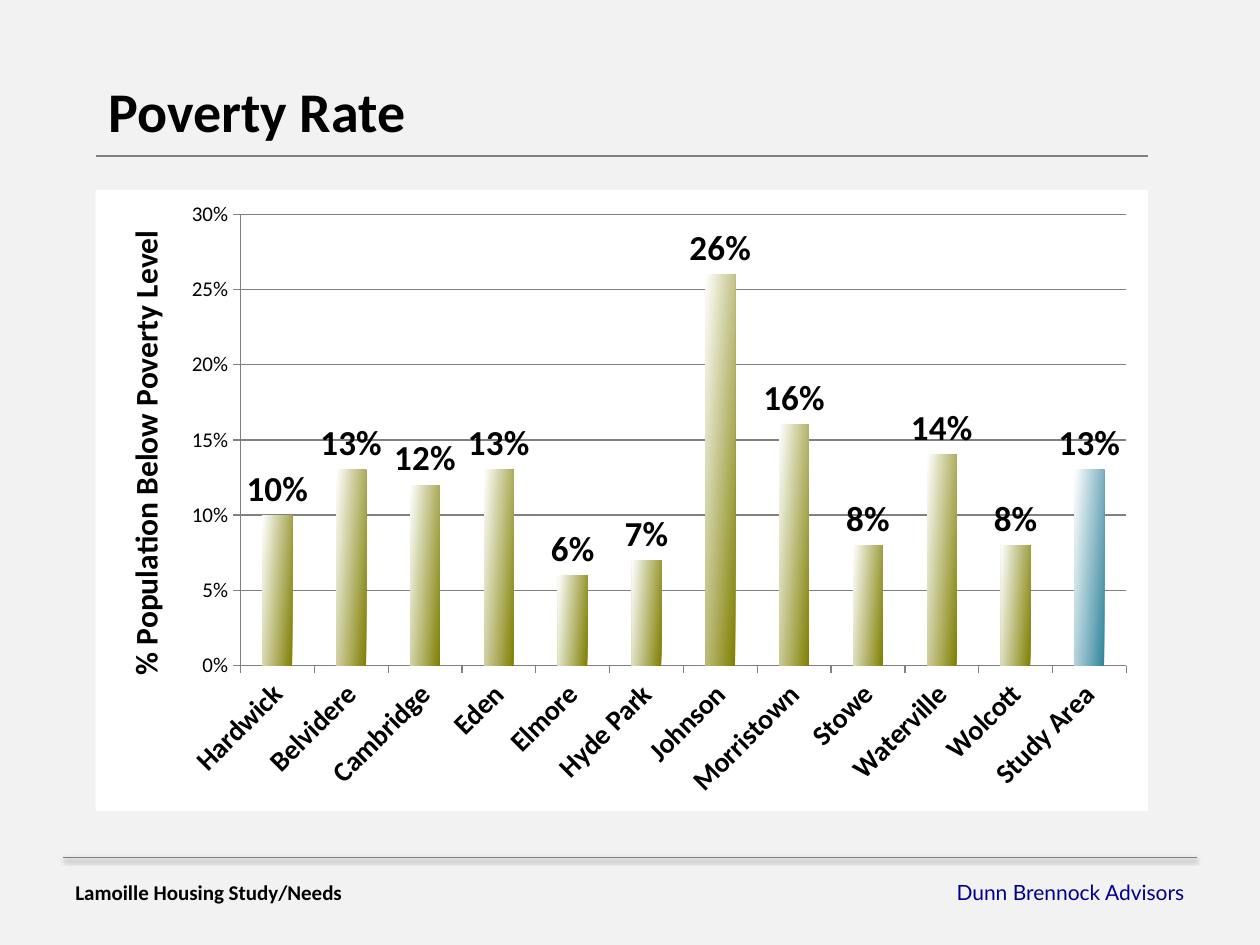
from lxml import etree
from pptx import Presentation
from pptx.chart.data import CategoryChartData
from pptx.dml.color import RGBColor
from pptx.enum.chart import XL_CHART_TYPE, XL_LABEL_POSITION, XL_TICK_MARK
from pptx.enum.shapes import MSO_CONNECTOR
from pptx.enum.text import MSO_ANCHOR, PP_ALIGN
from pptx.oxml import parse_xml
from pptx.oxml.ns import nsdecls, qn
from pptx.util import Cm, Pt

BLACK = RGBColor(0x00, 0x00, 0x00)
WHITE = RGBColor(0xFF, 0xFF, 0xFF)
PALE_GRAY = RGBColor(0xF2, 0xF2, 0xF2)
GRAY = RGBColor(0x80, 0x80, 0x80)
NAVY = RGBColor(0x00, 0x00, 0x90)
OLIVE = RGBColor(0x80, 0x80, 0x03)
TEAL = RGBColor(0x31, 0x85, 0x9C)

POVERTY_RATES = {
    "Hardwick": 0.10, "Belvidere": 0.13, "Cambridge": 0.12, "Eden": 0.13,
    "Elmore": 0.06, "Hyde Park": 0.07, "Johnson": 0.26, "Morristown": 0.16,
    "Stowe": 0.08, "Waterville": 0.14, "Wolcott": 0.08, "Study Area": 0.13,
}


def format_font(font, size, bold=False, color=BLACK, name="Calibri"):
    font.size, font.bold, font.name = Pt(size), bold, name
    font.color.rgb = color


def write_text(text_frame, text, align=PP_ALIGN.LEFT, anchor=MSO_ANCHOR.MIDDLE, **font_format):
    text_frame.word_wrap = True
    text_frame.vertical_anchor = anchor
    paragraph = text_frame.paragraphs[0]
    paragraph.alignment = align
    run = paragraph.add_run()
    run.text = text
    format_font(run.font, **font_format)


def add_rule(slide, left, top, width, weight, shadow=False):
    line = slide.shapes.add_connector(
        MSO_CONNECTOR.STRAIGHT, Cm(left), Cm(top), Cm(left + width), Cm(top))
    line.line.color.rgb = GRAY
    line.line.width = Pt(weight)
    effects = etree.SubElement(line._element.spPr, qn("a:effectLst"))
    if shadow:
        effects.append(parse_xml(
            f'<a:outerShdw {nsdecls("a")} blurRad="{Pt(3.1)}" dist="{Pt(1.6)}" '
            'dir="5400000" rotWithShape="0"><a:srgbClr val="000000">'
            '<a:alpha val="38000"/></a:srgbClr></a:outerShdw>'))


def add_title(slide, left, top, width, height):
    title = slide.shapes.title
    title.left, title.top = Cm(left), Cm(top)
    title.width, title.height = Cm(width - 1), Cm(height - 0.1)
    write_text(title.text_frame, "Poverty Rate", size=32, bold=True)
    add_rule(slide, left, top + height, width, weight=1)


def add_footer(slide, left, top, width):
    add_rule(slide, left, top, width, weight=0.5, shadow=True)
    label_width, label_height = 7.52, 0.77
    labels = (
        ("Lamoille Housing Study/Needs", left, dict(bold=True)),
        ("Dunn Brennock Advisors", left + width - label_width,
         dict(align=PP_ALIGN.RIGHT, color=NAVY, name="Lato")),
    )
    for text, label_left, text_format in labels:
        label = slide.shapes.add_textbox(
            Cm(label_left), Cm(top + 0.32), Cm(label_width), Cm(label_height))
        write_text(label.text_frame, text, size=12, **text_format)


def fill_gradient(fill, color):
    fill.gradient()
    fill.gradient_angle = 175
    for stop, stop_color in zip(fill.gradient_stops, (color, WHITE)):
        stop.color.rgb = stop_color


def format_axis(axis, size, bold=False):
    axis.major_tick_mark = XL_TICK_MARK.OUTSIDE
    axis.minor_tick_mark = XL_TICK_MARK.NONE
    axis.format.line.color.rgb = GRAY
    format_font(axis.tick_labels.font, size, bold)


def place_part(part, index, **settings):
    """Give a chart part a fixed place, in fractions of the chart's box."""
    for layout in part.findall(qn("c:layout")):
        part.remove(layout)
    settings = dict(xMode="edge", yMode="edge") | settings
    if "w" in settings:
        settings = dict(layoutTarget="inner") | settings
    children = "".join(f'<c:{tag} val="{value}"/>' for tag, value in settings.items())
    part.insert(index, parse_xml(
        f'<c:layout {nsdecls("c")}><c:manualLayout>{children}</c:manualLayout></c:layout>'))


def add_poverty_chart(slide, left, top, width, height):
    data = CategoryChartData(number_format="0%")
    data.categories = list(POVERTY_RATES)
    data.add_series("Series 1", list(POVERTY_RATES.values()))
    chart = slide.shapes.add_chart(
        XL_CHART_TYPE.COLUMN_CLUSTERED, Cm(left), Cm(top), Cm(width), Cm(height), data).chart
    chart.has_title = chart.has_legend = False
    format_font(chart.font, 10)
    place_part(chart._chartSpace.chart.plotArea, 0, x=2.92 / width, y=0.49 / height,
               w=17.86 / width, h=9.1 / height)

    # White chart background
    chart._chartSpace.chart.addnext(parse_xml(
        f'<c:spPr {nsdecls("c", "a")}><a:solidFill><a:srgbClr val="{WHITE}"/></a:solidFill>'
        '<a:ln><a:noFill/></a:ln></c:spPr>'))

    # Axes
    category_axis, value_axis = chart.category_axis, chart.value_axis
    format_axis(category_axis, 16, bold=True)
    category_axis._element.txPr.find(qn("a:bodyPr")).set("rot", "-2700000")
    format_axis(value_axis, 12)
    value_axis.minimum_scale, value_axis.maximum_scale = 0, 0.3
    value_axis.major_unit = 0.05
    value_axis.tick_labels.number_format = "0%"
    value_axis.tick_labels.number_format_is_linked = False
    value_axis.major_gridlines.format.line.color.rgb = GRAY
    axis_title = value_axis.axis_title
    axis_title.text_frame.text = "% Population Below Poverty Level"
    format_font(axis_title.text_frame.paragraphs[0].runs[0].font, 18, bold=True)
    place_part(axis_title._element, 1, x=0.45 / width, y=0.7 / height)

    # Columns, with the study area set apart
    plot = chart.plots[0]
    plot.gap_width = 150
    plot.vary_by_categories = False
    series = plot.series[0]
    series.invert_if_negative = False
    fill_gradient(series.format.fill, OLIVE)
    study_area = list(POVERTY_RATES).index("Study Area")
    fill_gradient(series.points[study_area].format.fill, TEAL)

    # Value labels
    labels = series.data_labels
    labels.show_value = True
    labels.position = XL_LABEL_POSITION.OUTSIDE_END
    labels.number_format = "0%"
    labels.number_format_is_linked = False
    format_font(labels.font, 20, bold=True)


def main():
    presentation = Presentation()
    presentation.slide_width, presentation.slide_height = Cm(25.4), Cm(19.05)
    title_only = presentation.slide_layouts[5]
    slide = presentation.slides.add_slide(title_only)
    slide.background.fill.solid()
    slide.background.fill.fore_color.rgb = PALE_GRAY

    content_left, content_width = 1.93, 21.21
    add_title(slide, content_left, 1.41, content_width, 1.73)
    add_poverty_chart(slide, content_left, 3.83, content_width, 12.52)
    add_footer(slide, 1.27, 17.28, 22.86)
    presentation.save("out.pptx")


if __name__ == "__main__":
    main()
